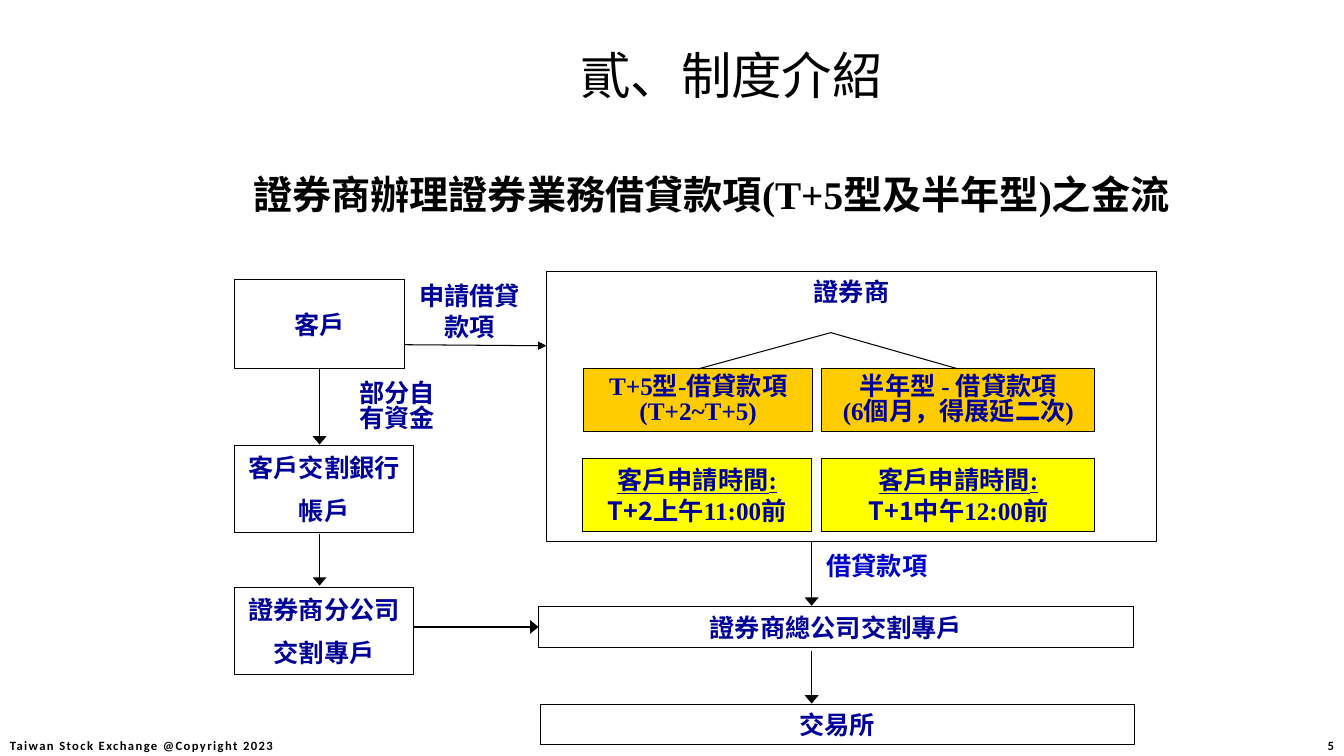
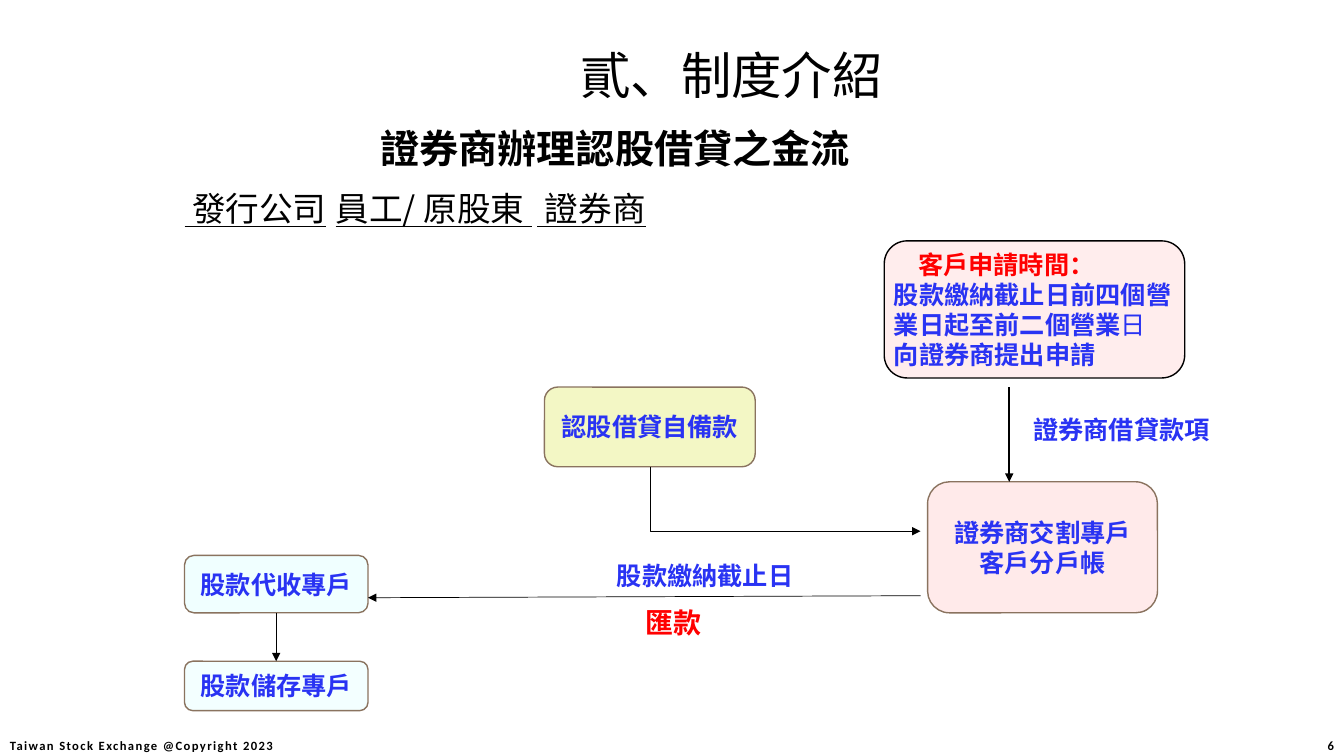
from lxml.etree import SubElement
from pptx import Presentation
from pptx.dml.color import RGBColor
from pptx.enum.shapes import MSO_CONNECTOR, MSO_SHAPE
from pptx.enum.text import MSO_ANCHOR, MSO_AUTO_SIZE, PP_ALIGN
from pptx.oxml.ns import qn
from pptx.util import Inches, Pt

SERIF, SANS, FOOTER_FONT = "Times New Roman", "Noto Sans CJK SC", "Calibri"
COLORS = {
    "black": "000000", "navy": "000099", "blue": "0000CC", "bright": "2933F3",
    "red": "FF0000", "yellow": "FFFF00", "orange": "FFCC00", "pink": "FFCCCC",
    "lime": "F3F7C5", "cyan": "CCFFFF", "brown": "8A735F",
}

TITLE = "貳、制度介紹"
COPYRIGHT = "Taiwan Stock Exchange @Copyright 2023"
TITLE_STYLE = dict(size=36, font=SERIF, color="black", bold=False)
HEADING_STYLE = dict(size=28, font=SERIF, color="black", bold=True)
COLUMN_STYLE = dict(size=24, font=SANS, color="black", bold=False)
FOOTER_STYLE = dict(size=9, font=FOOTER_FONT, color="black", bold=True, spacing=100)
LOAN_STYLE = dict(size=18, font=SERIF, color="navy", bold=True)
SHARE_STYLE = dict(size=18, font=SANS, color="bright", bold=True)
UNDERLINED = {"underline": True}

LOAN_HEADING = "證券商辦理證券業務借貸款項(T+5型及半年型)之金流"
APPLY_TIME = [("客戶申請時間:", UNDERLINED)]
LOAN_BOXES = {
    "broker": ((5.42, 2.69, 6.05, 2.68), ["證券商"], dict(anchor="top")),
    "client": ((2.33, 2.77, 1.68, 0.89), ["客戶"], {}),
    "bank": ((2.33, 4.42, 1.77, 0.86), ["客戶交割銀行", "帳戶"], dict(before=9)),
    "branch": ((2.33, 5.83, 1.77, 0.86), ["證券商分公司", "交割專戶"], dict(before=9)),
    "head_office": ((5.34, 6.02, 5.9, 0.4), ["證券商總公司交割專戶"], {}),
    "exchange": ((5.36, 6.99, 5.89, 0.4), ["交易所"], {}),
    "five_day": ((5.79, 3.66, 2.27, 0.62), ["T+5型-借貸款項", "(T+2~T+5)"],
                 dict(fill="orange", line_spacing=0.85)),
    "half_year": ((8.15, 3.66, 2.71, 0.62), ["半年型 - 借貸款項", "(6個月，得展延二次)"],
                  dict(fill="orange", line_spacing=0.85)),
    "five_day_time": ((5.78, 4.55, 2.27, 0.72),
                      [APPLY_TIME, [("T+2上", {"font": SANS}), ("午11:00前", {})]],
                      dict(fill="yellow")),
    "half_year_time": ((8.15, 4.55, 2.71, 0.72),
                       [APPLY_TIME, [("T+1中", {"font": SANS}), ("午12:00前", {})]],
                       dict(fill="yellow")),
}
LOAN_LINES = [
    ((8.24, 3.3), (6.93, 3.66), 0.75, dict(end=("five_day", 0), head=None)),
    ((8.24, 3.3), (9.5, 3.66), 0.75, dict(end=("half_year", 0), head=None)),
    ((4.01, 3.42), (5.42, 3.43), 0.75, {}),
    ((3.17, 3.66), (3.17, 4.41), 1, dict(begin=("client", 2), head="lg")),
    ((3.17, 5.3), (3.17, 5.81), 1, dict(head="lg")),
    ((4.1, 6.22), (5.34, 6.22), 1, dict(end=("head_office", 1), head="lg")),
    ((8.05, 5.37), (8.05, 6.01), 1, dict(head="lg")),
    ((8.05, 6.46), (8.05, 6.98), 1, dict(head="lg")),
]
LOAN_LABELS = [
    ((4.06, 2.73, 1.2, 0.71), ["申請借貸", "款項"], {}, dict(align="center")),
    ((3.44, 3.76, 1, 0.56), ["部分自", "有資金"], {}, dict(align="center", line_spacing=0.85)),
    ((8.1, 5.41, 1.4, 0.4), ["借貸款項"], dict(color="blue"), {}),
]

SHARE_HEADING = "證券商辦理認股借貸之金流"
COLUMN_HEADS = [(" 發行公司", UNDERLINED), ("\t", {}), ("員工/ 原股東 ", UNDERLINED),
                ("\t", {}), (" 證券商\t", UNDERLINED)]
COLUMN_TABS = [2.3, 5.3, 7.35]
SHARE_BOXES = {
    "apply_time": ((8.77, 2.39, 2.98, 1.36),
                   [[("客戶申請時間：", {"color": "red"})],
                    [("股款繳納截止日前四個營業日起至前二個營業", {}), ("日", {"bold": False})],
                    "向證券商提出申請"],
                   dict(fill="pink", alpha=35, line="black", align="left")),
    "account": ((9.2, 4.78, 2.28, 1.3), ["證券商交割專戶", "客戶分戶帳"],
                dict(fill="pink", alpha=40)),
    "own_funds": ((5.4, 3.84, 2.09, 0.79), ["認股借貸自備款"], dict(fill="lime")),
    "collection": ((1.83, 5.51, 1.82, 0.57), ["股款代收專戶"], dict(fill="cyan", alpha=29)),
    "storage": ((1.83, 6.56, 1.82, 0.49), ["股款儲存專戶"], dict(fill="cyan", alpha=22)),
}
SHARE_LINES = [
    ((2.74, 6.08), (2.74, 6.56), 0.5, dict(begin=("collection", 2), end=("storage", 0))),
    ((9.13, 5.91), (3.65, 5.93), 0.5, {}),
    ((10.01, 3.84), (10.01, 4.78), 1.25, {}),
    ((6.45, 4.63), (9.13, 5.27), 0.5, dict(elbow=True)),
]
SHARE_LABELS = [
    ((10.15, 4.06, 2.57, 0.4), ["證券商借貸款項"], {}, {}),
    ((6.02, 5.51, 2.01, 0.4), ["股款繳納截止日"], {}, {}),
    ((6.3, 5.95, 1.57, 0.44), ["匯款"], dict(size=20, color="red"), {}),
]

ALIGNS = {"left": PP_ALIGN.LEFT, "center": PP_ALIGN.CENTER, "right": PP_ALIGN.RIGHT}
ANCHORS = {"top": MSO_ANCHOR.TOP, "middle": MSO_ANCHOR.MIDDLE}


def inches(values):
    return [Inches(value) for value in values]


def rgb(name):
    return RGBColor.from_string(COLORS[name])


def format_run(run, size, font, color, bold, underline=False, spacing=None):
    run.font.size = Pt(size)
    run.font.name = font
    run.font.bold = bold
    run.font.underline = underline
    run.font.color.rgb = rgb(color)
    properties = run.font._element
    properties.find(qn("a:latin")).addnext(
        properties.makeelement(qn("a:ea"), {"typeface": SANS}))
    if spacing:
        properties.set("spc", str(spacing))


def write_paragraph(paragraph, content, style, align="left", line_spacing=1.0, before=0):
    paragraph.alignment = ALIGNS[align]
    paragraph.line_spacing = line_spacing
    paragraph.space_before = Pt(before)
    for text, changes in [(content, {})] if isinstance(content, str) else content:
        run = paragraph.add_run()
        run.text = text
        format_run(run, **{**style, **changes})


def write(frame, paragraphs, style, anchor="middle", margins=(0.1, 0.05), before=0, **layout):
    frame.word_wrap = True
    frame.auto_size = MSO_AUTO_SIZE.NONE
    frame.vertical_anchor = ANCHORS[anchor]
    frame.margin_left = frame.margin_right = Inches(margins[0])
    frame.margin_top = frame.margin_bottom = Inches(margins[1])
    for index, content in enumerate(paragraphs):
        paragraph = frame.paragraphs[0] if index == 0 else frame.add_paragraph()
        write_paragraph(paragraph, content, style, before=before if index else 0, **layout)


def indent(paragraph, margin, tabs=()):
    properties = paragraph._p.get_or_add_pPr()
    properties.set("marL", str(Inches(margin)))
    properties.set("indent", "0")
    SubElement(properties, qn("a:buNone"))
    if tabs:
        stops = SubElement(properties, qn("a:tabLst"))
        for position in tabs:
            SubElement(stops, qn("a:tab"), pos=str(Inches(position)), algn="l")


def place(shape, bounds):
    shape.left, shape.top, shape.width, shape.height = inches(bounds)


def add_text(slide, bounds, paragraphs, style, **layout):
    write(slide.shapes.add_textbox(*inches(bounds)).text_frame, paragraphs, style, **layout)


def add_box(slide, kind, bounds, paragraphs, style, fill=None, alpha=None,
            line="black", line_width=0.75, align="center", **layout):
    box = slide.shapes.add_shape(kind, *inches(bounds))
    box.shadow.inherit = False
    box.line.color.rgb = rgb(line)
    box.line.width = Pt(line_width)
    if fill:
        box.fill.solid()
        box.fill.fore_color.rgb = rgb(fill)
    else:
        box.fill.background()
    if alpha:
        color = box._element.spPr.find(qn("a:solidFill"))[0]
        SubElement(color, qn("a:alpha"), val=str(alpha * 1000))
    write(box.text_frame, paragraphs, style, align=align, margins=(0.03, 0.05), **layout)
    return box


def turn_down_then_right(connector, start, finish):
    across, down = finish[0] - start[0], finish[1] - start[1]
    center_x, center_y = start[0] + across / 2, start[1] + down / 2
    place(connector, (center_x - down / 2, center_y - across / 2, down, across))
    properties = connector._element.spPr
    properties.find(qn("a:prstGeom")).set("prst", "bentConnector2")
    frame = properties.find(qn("a:xfrm"))
    frame.set("rot", "16200000")
    frame.set("flipH", "1")


def add_line(slide, boxes, start, finish, width, begin=None, end=None, head="med", elbow=False):
    kind = MSO_CONNECTOR.ELBOW if elbow else MSO_CONNECTOR.STRAIGHT
    connector = slide.shapes.add_connector(kind, *inches(start + finish))
    if begin:
        connector.begin_connect(boxes[begin[0]], begin[1])
    if end:
        connector.end_connect(boxes[end[0]], end[1])
    if elbow:
        turn_down_then_right(connector, start, finish)
    connector.line.color.rgb = rgb("black")
    connector.line.width = Pt(width)
    properties = connector._element.spPr
    if head:
        SubElement(properties.find(qn("a:ln")), qn("a:tailEnd"), type="triangle", w=head, len="med")
    SubElement(properties, qn("a:effectLst"))


def start_slide(prs, number, body_bounds):
    slide = prs.slides.add_slide(prs.slide_layouts[1])
    title, body = slide.placeholders
    place(title, (1.67, 0.24, 11.17, 1))
    write(title.text_frame, [TITLE], TITLE_STYLE, align="center")
    place(body, body_bounds)
    add_text(slide, (0, 7.3, 3.1, 0.2), [COPYRIGHT], FOOTER_STYLE, margins=(0.1, 0))
    add_text(slide, (12.74, 7.3, 0.59, 0.2), [str(number)], FOOTER_STYLE,
             margins=(0.1, 0), align="right")
    return slide, body.text_frame


def draw_flow(slide, boxes, lines, labels, style, kind, **box_defaults):
    drawn = {key: add_box(slide, kind, bounds, paragraphs, style, **{**box_defaults, **options})
             for key, (bounds, paragraphs, options) in boxes.items()}
    for start, finish, width, options in lines:
        add_line(slide, drawn, start, finish, width, **options)
    for bounds, paragraphs, changes, layout in labels:
        add_text(slide, bounds, paragraphs, {**style, **changes}, **layout)
    return drawn


def build_loan_slide(prs):
    slide, body = start_slide(prs, 5, (2.41, 1.64, 9.6, 1))
    indent(body.paragraphs[0], 0)
    write(body, [LOAN_HEADING], HEADING_STYLE, anchor="top")
    draw_flow(slide, LOAN_BOXES, LOAN_LINES, LOAN_LABELS, LOAN_STYLE, MSO_SHAPE.RECTANGLE)


def build_share_slide(prs):
    slide, body = start_slide(prs, 6, (1.73, 1.18, 9, 1.2))
    indent(body.paragraphs[0], 1.94)
    write(body, [SHARE_HEADING], HEADING_STYLE, anchor="top")
    columns = body.add_paragraph()
    indent(columns, 0, COLUMN_TABS)
    write_paragraph(columns, COLUMN_HEADS, COLUMN_STYLE, before=12)
    drawn = draw_flow(slide, SHARE_BOXES, SHARE_LINES, SHARE_LABELS, SHARE_STYLE,
                      MSO_SHAPE.ROUNDED_RECTANGLE, line="brown", line_width=1)
    indent(drawn["apply_time"].text_frame.paragraphs[0], 0.24)


def main():
    prs = Presentation()
    prs.slide_width, prs.slide_height = inches((13.33, 7.5))
    build_loan_slide(prs)
    build_share_slide(prs)
    prs.save("out.pptx")


if __name__ == "__main__":
    main()
